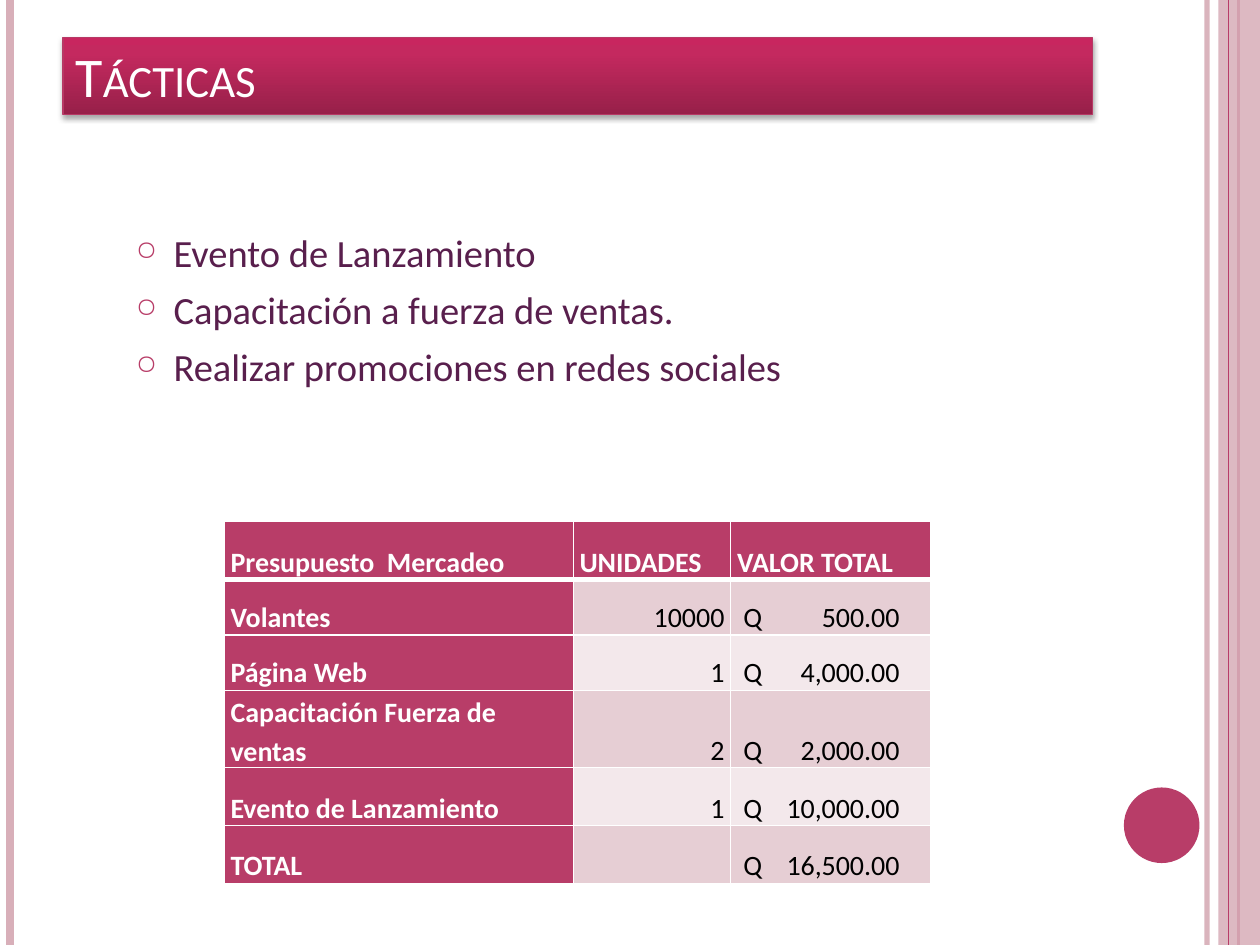
"""Build the marketing tactics slide with its bullets and budget table."""
from pptx import Presentation, oxml, util as u
from pptx.dml.color import RGBColor
from pptx.enum import shapes, text

WIDTH, HEIGHT = 10, 7.5
FONT = "Calibri"
NAMESPACE = 'xmlns:a="http://schemas.openxmlformats.org/drawingml/2006/main"'
COLORS = {
    "white": "FFFFFF", "black": "000000", "plum": "591F4D", "rose": "B83D68",
    "pale": "D8AFB9", "band": "E6CED4", "light": "F3E8EB", "edge": "B73965",
    "deep": "972049", "bright": "C4295F", "top": "C8265F",
}

TITLE = "Tácticas"
TACTICS = [
    "Evento de Lanzamiento",
    "Capacitación a fuerza de ventas.",
    "Realizar promociones en redes sociales",
]
BUDGET = [
    ("Presupuesto  Mercadeo", "UNIDADES", "VALOR TOTAL"),
    ("Volantes", "10000", "Q\t500.00"),
    ("Página Web", "1", "Q\t4,000.00"),
    ("Capacitación Fuerza de ventas", "2", "Q\t2,000.00"),
    ("Evento de Lanzamiento", "1", "Q\t10,000.00"),
    ("TOTAL", "", "Q\t16,500.00"),
]
COLUMN_WIDTHS = [2.77, 1.25, 1.59]
ROW_HEIGHTS = [0.46, 0.44, 0.44, 0.44, 0.46, 0.46]
TITLE_STOPS = [(0, "deep"), (80, "bright"), (100, "top")]
LEFT_RULES = [(9.58, "pale", 3, 93), (0.08, "pale", 4.5, 100), (9.83, "rose", 1.5, 100)]
RIGHT_RULE = (9.75, "rose", 0.75, 100)


def color(name):
    return RGBColor.from_string(COLORS[name])


def xml(markup):
    """Parse a drawing element written without its namespace declaration."""
    tag, rest = markup.split(" ", 1)
    return oxml.parse_xml(f"{tag} {NAMESPACE} {rest}")


def set_alpha(shape, percent):
    for node in shape.element.spPr.iter(oxml.ns.qn("a:srgbClr")):
        node.append(xml(f'<a:alpha val="{percent * 1000}"/>'))


def add_run(paragraph, words, size, name, bold=False):
    run = paragraph.add_run()
    run.text = words
    run.font.name, run.font.size, run.font.bold = FONT, u.Pt(size), bold
    run.font.color.rgb = color(name)
    return run


def add_rule(slide, x, name, width, alpha):
    rule = slide.shapes.add_connector(
        shapes.MSO_CONNECTOR.STRAIGHT, u.Inches(x), 0, u.Inches(x), u.Inches(HEIGHT))
    rule.line.color.rgb = color(name)
    rule.line.width = u.Pt(width)
    set_alpha(rule, alpha)
    rule.element.spPr.append(xml("<a:effectLst />"))


def add_block(slide, kind, box, name):
    block = slide.shapes.add_shape(kind, *map(u.Inches, box))
    block.shadow.inherit = False
    block.fill.solid()
    block.fill.fore_color.rgb = color(name)
    block.line.fill.background()
    return block


def add_frame(slide):
    for rule in LEFT_RULES:
        add_rule(slide, *rule)
    panel = add_block(slide, shapes.MSO_SHAPE.RECTANGLE, (9.67, 0, 0.33, HEIGHT), "pale")
    set_alpha(panel, 87)
    add_rule(slide, *RIGHT_RULE)
    add_block(slide, shapes.MSO_SHAPE.OVAL, (8.92, 6.25, 0.6, 0.6), "rose")


def format_title(title):
    title.left, title.top, title.width, title.height = map(u.Inches, (0.5, 0.3, 8.17, 0.61))
    stops = "".join(f'<a:gs pos="{share * 1000}"><a:srgbClr val="{COLORS[name]}"/></a:gs>'
                    for share, name in TITLE_STOPS)
    properties = title.element.spPr
    properties.append(xml(f'<a:gradFill rotWithShape="1"><a:gsLst>{stops}</a:gsLst>'
                          '<a:lin ang="16200000" scaled="0"/></a:gradFill>'))
    title.line.color.rgb = color("edge")
    title.line.width = u.Pt(0.75)
    properties.append(xml(
        f'<a:effectLst ><a:outerShdw blurRad="{u.Pt(3.1)}" dist="{u.Pt(1.8)}" dir="5400000">'
        f'<a:srgbClr val="{COLORS["black"]}"><a:alpha val="35000"/></a:srgbClr>'
        '</a:outerShdw></a:effectLst>'))
    frame = title.text_frame
    frame.vertical_anchor = text.MSO_ANCHOR.BOTTOM
    frame.auto_size = text.MSO_AUTO_SIZE.NONE
    paragraph = frame.paragraphs[0]
    paragraph.alignment = text.PP_ALIGN.LEFT
    run = add_run(paragraph, TITLE, 32, "white")
    run.font._element.set("cap", "small")


def add_tactics(slide):
    frame = slide.shapes.add_textbox(*map(u.Inches, (0.98, 1.31, 8.17, 1.69))).text_frame
    frame.word_wrap = True
    frame.margin_top = u.Inches(0.51)
    for index, tactic in enumerate(TACTICS):
        paragraph = frame.add_paragraph() if index else frame.paragraphs[0]
        paragraph.space_after = u.Pt(6)
        properties = paragraph._p.get_or_add_pPr()
        properties.set("marL", str(u.Inches(0.3)))
        properties.set("indent", str(u.Inches(-0.3)))
        properties.append(xml(f'<a:buClr ><a:srgbClr val="{COLORS["rose"]}"/></a:buClr>'))
        properties.append(xml('<a:buSzPct val="70000"/>'))
        properties.append(xml('<a:buChar char="○"/>'))
        add_run(paragraph, tactic, 22, "plum")


def set_borders(cell, bottom):
    properties = cell._tc.get_or_add_tcPr()
    widths = {"lnL": 1, "lnR": 1, "lnT": 1, "lnB": bottom}
    for index, (side, width) in enumerate(widths.items()):
        properties.insert(index, xml(
            f'<a:{side} w="{u.Pt(width)}"><a:solidFill><a:srgbClr val="{COLORS["white"]}"/>'
            f'</a:solidFill></a:{side}>'))


def fill_cell(cell, words, row, column):
    heading = row == 0 or column == 0
    amount = column == 2 and not heading
    cell.vertical_anchor = text.MSO_ANCHOR.BOTTOM
    cell.margin_left = u.Inches(0.1 if amount else 0.05)
    cell.margin_right = u.Inches(0.05)
    cell.margin_top = cell.margin_bottom = 0
    cell.fill.solid()
    cell.fill.fore_color.rgb = color("rose" if heading else "band" if row % 2 else "light")
    set_borders(cell, 1 if row else 3)
    paragraph = cell.text_frame.paragraphs[0]
    paragraph.line_spacing = 1.15
    paragraph.space_before = u.Pt(10)
    if column == 1 and not heading:
        paragraph.alignment = text.PP_ALIGN.RIGHT
    if amount:
        paragraph._p.get_or_add_pPr().append(
            xml(f'<a:tabLst ><a:tab pos="{u.Inches(1.24)}" algn="r"/></a:tabLst>'))
    if words:
        add_run(paragraph, words, 16, "white" if heading else "black", heading)


def add_budget(slide):
    box = (1.78, 4.14, sum(COLUMN_WIDTHS), sum(ROW_HEIGHTS))
    table = slide.shapes.add_table(
        len(BUDGET), len(COLUMN_WIDTHS), *map(u.Inches, box)).table
    table.first_col = True
    for column, width in zip(table.columns, COLUMN_WIDTHS):
        column.width = u.Inches(width)
    for row, (height, entries) in enumerate(zip(ROW_HEIGHTS, BUDGET)):
        table.rows[row].height = u.Inches(height)
        for column, words in enumerate(entries):
            fill_cell(table.cell(row, column), words, row, column)


def main():
    presentation = Presentation()
    presentation.slide_width, presentation.slide_height = u.Inches(WIDTH), u.Inches(HEIGHT)
    slide = presentation.slides.add_slide(presentation.slide_layouts[5])
    add_frame(slide)
    format_title(slide.shapes.title)
    add_tactics(slide)
    add_budget(slide)
    presentation.save("out.pptx")


if __name__ == "__main__":
    main()
